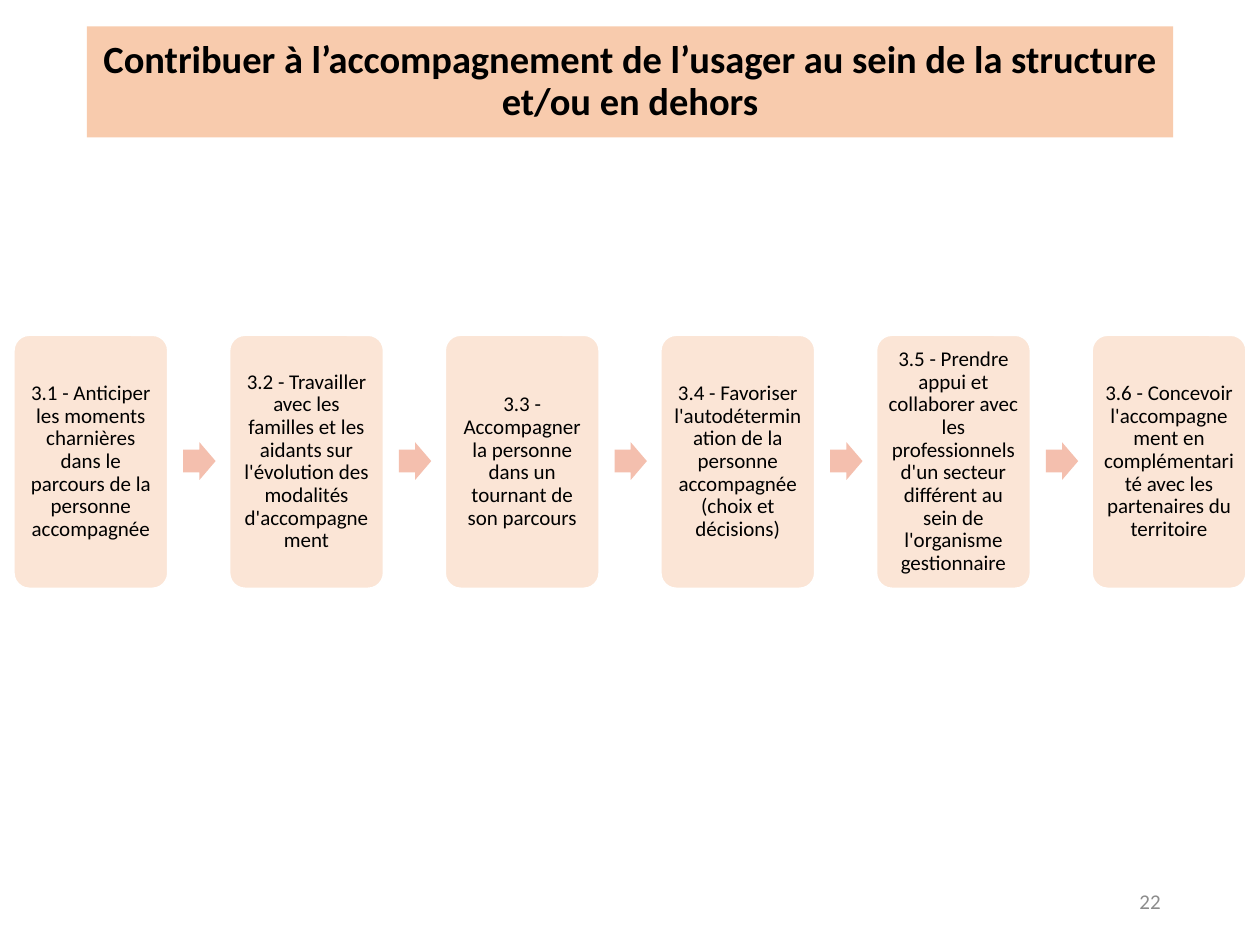
import pptx
import pptx.util
import pptx.dml.color
import pptx.enum.shapes
import pptx.enum.text

RGBColor = pptx.dml.color.RGBColor
MSO_SHAPE = pptx.enum.shapes.MSO_SHAPE
ALIGN = pptx.enum.text.PP_ALIGN
PEACH = RGBColor(0xF8, 0xCB, 0xAD)
PALE = RGBColor(0xFB, 0xE5, 0xD6)
SALMON = RGBColor(0xF4, 0xBF, 0xAE)
WHITE = RGBColor(0xFF, 0xFF, 0xFF)
BLACK = RGBColor(0x00, 0x00, 0x00)
GREY = RGBColor(0x8C, 0x8C, 0x8C)

STEPS = [
    "3.1 - Anticiper les moments charnières dans le parcours de la personne accompagnée",
    "3.2 - Travailler avec les familles et les aidants sur l'évolution des modalités d'accompagnement",
    "3.3 - Accompagner la personne dans un tournant de son parcours",
    "3.4 - Favoriser l'autodétermination de la personne accompagnée (choix et décisions)",
    "3.5 - Prendre appui et collaborer avec les professionnels d'un secteur différent au sein de l'organisme gestionnaire",
    "3.6 - Concevoir l'accompagnement en complémentarité avec les partenaires du territoire",
]


class ProcessSlide:
    """Style and current slide; one column is a step's width, one row an inch."""

    font = "Calibri"
    margin = 0.11
    gap = 0.4

    def __init__(self, prs, steps):
        self.s = prs.slides.add_slide(prs.slide_layouts[6])
        width = prs.slide_width / pptx.util.Inches(1) - 2 * self.margin
        self.column = width / (steps + (steps - 1) * self.gap)

    def box(self, left, top, width, height):
        return [pptx.util.Inches(v) for v in (left, top, width, height)]

    def cell(self, col, row, cols, rows):
        return self.box(self.margin + col * self.column, row, cols * self.column, rows)

    def shape(self, kind, place, fill):
        sp = self.s.shapes.add_shape(kind, *place)
        sp.shadow.inherit = False
        sp.fill.solid()
        sp.fill.fore_color.rgb = fill
        sp.line.fill.background()
        return sp

    def text(self, sp, text, size, color=BLACK, align=ALIGN.CENTER, bold=False, spacing=0.9):
        tf = sp.text_frame
        tf.text = text
        tf.word_wrap = True
        tf.vertical_anchor = pptx.enum.text.MSO_ANCHOR.MIDDLE
        p = tf.paragraphs[0]
        p.alignment = align
        p.line_spacing = spacing
        r = p.runs[0]
        r.font.name = self.font
        r.font.size = pptx.util.Pt(size)
        r.font.bold = bold
        r.font.color.rgb = color

    def title(self, text):
        sp = self.shape(MSO_SHAPE.RECTANGLE, self.box(0.69, 0.21, 8.62, 0.88), PEACH)
        self.text(sp, text, 22, bold=True)

    def step(self, index, text):
        place = self.cell(index * (1 + self.gap), 2.66, 1, 2.01)
        sp = self.shape(MSO_SHAPE.ROUNDED_RECTANGLE, place, PALE)
        sp.adjustments[0] = 0.1
        sp.line.color.rgb = WHITE
        sp.line.width = pptx.util.Pt(1)
        tf = sp.text_frame
        tf.margin_left = tf.margin_right = pptx.util.Inches(0.05)
        tf.margin_top = tf.margin_bottom = pptx.util.Inches(0.05)
        self.text(sp, text, 12)

    def arrow(self, index):
        place = self.cell(index * (1 + self.gap) + 1.1, 3.51, 0.21, 0.3)
        sp = self.shape(MSO_SHAPE.RIGHT_ARROW, place, SALMON)
        sp.adjustments[0] = 0.6
        sp.adjustments[1] = 0.5

    def number(self, text):
        sp = self.s.shapes.add_textbox(*self.box(7.06, 6.95, 2.25, 0.4))
        self.text(sp, text, 12, GREY, ALIGN.RIGHT, spacing=1.0)


def main():
    prs = pptx.Presentation()
    prs.slide_width = pptx.util.Inches(10)
    prs.slide_height = pptx.util.Inches(7.5)
    slide = ProcessSlide(prs, len(STEPS))
    slide.title("Contribuer à l’accompagnement de l’usager au sein de la structure et/ou en dehors")
    slide.number("22")
    for index, text in enumerate(STEPS):
        slide.step(index, text)
        if index < len(STEPS) - 1:
            slide.arrow(index)
    prs.save("out.pptx")


if __name__ == "__main__":
    main()
